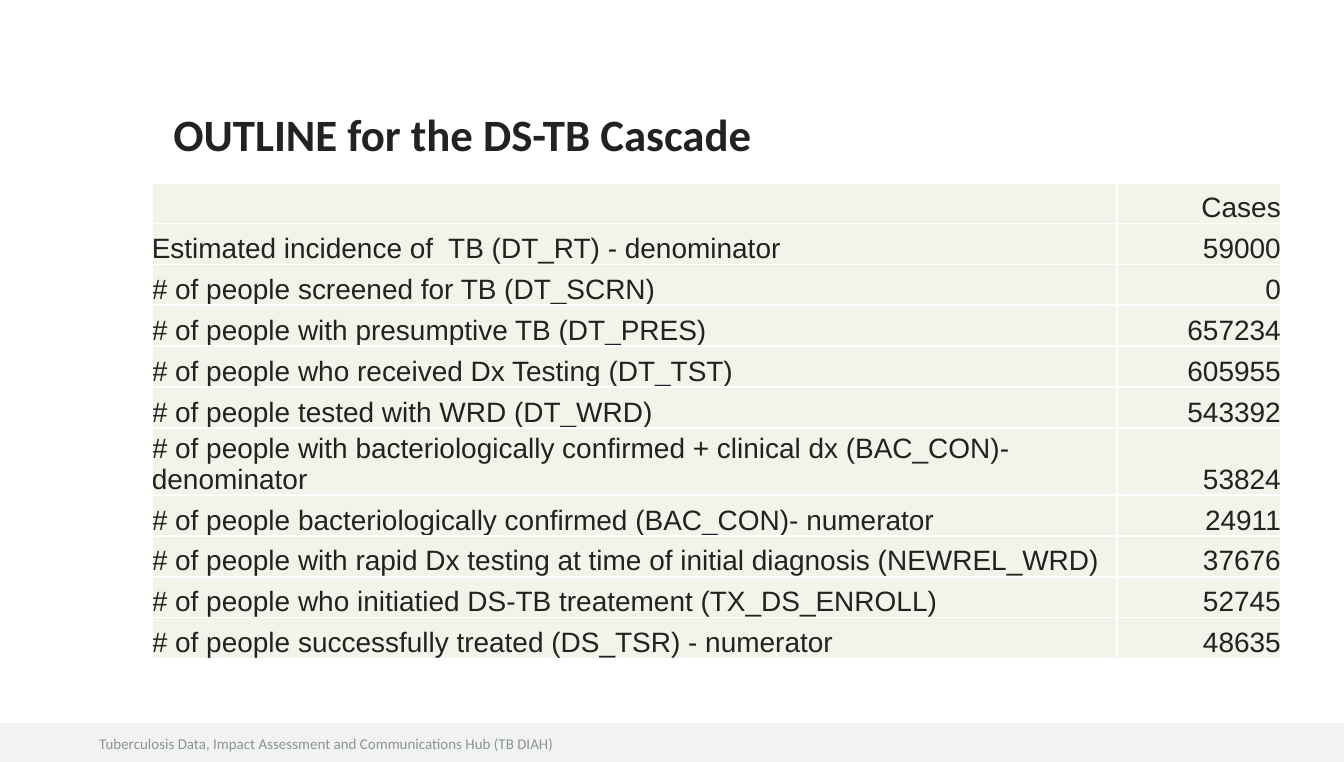
import pptx
import pptx.util
import pptx.dml.color
import pptx.enum.shapes
import pptx.enum.text
import pptx.oxml
import pptx.oxml.ns

Inches = pptx.util.Inches
Pt = pptx.util.Pt
RGBColor = pptx.dml.color.RGBColor
Anchor = pptx.enum.text.MSO_ANCHOR
Align = pptx.enum.text.PP_ALIGN

INK = RGBColor(0x22, 0x22, 0x22)
FOOTER_INK = RGBColor(0x87, 0x94, 0x99)
FOOTER_FILL = RGBColor(0xF2, 0xF2, 0xF2)
CELL_FILL = RGBColor(0xF1, 0xF4, 0xE8)
BORDER = RGBColor(0xFF, 0xFF, 0xFF)

ROWS = [
    ("", "Cases"),
    ("Estimated incidence of  TB (DT_RT) - denominator", "59000"),
    ("# of people screened for TB (DT_SCRN)", "0"),
    ("# of people with presumptive TB (DT_PRES)", "657234"),
    ("# of people who received Dx Testing (DT_TST)", "605955"),
    ("# of people tested with WRD (DT_WRD)", "543392"),
    ("# of people with bacteriologically confirmed + clinical dx (BAC_CON)- denominator", "53824"),
    ("# of people bacteriologically confirmed (BAC_CON)- numerator", "24911"),
    ("# of people with rapid Dx testing at time of initial diagnosis (NEWREL_WRD)", "37676"),
    ("# of people who initiatied DS-TB treatement (TX_DS_ENROLL)", "52745"),
    ("# of people successfully treated (DS_TSR) - numerator", "48635"),
]
TALL_ROW = 6


def set_values(target, values):
    for name, value in values.items():
        setattr(target, name, value)


def format_font(font, color, values):
    set_values(font, values)
    font.color.rgb = color


deck = pptx.Presentation()
set_values(deck, {"slide_width": Inches(10), "slide_height": Inches(5.67)})
slide = deck.slides.add_slide(deck.slide_layouts[5])

footer_bar = slide.shapes.add_shape(
    pptx.enum.shapes.MSO_SHAPE.RECTANGLE, Inches(0), Inches(5.38), Inches(10), Inches(0.29))
footer_bar.shadow.inherit = False
footer_bar.fill.solid()
footer_bar.fill.fore_color.rgb = FOOTER_FILL
footer_bar.line.fill.background()

footer_box = slide.shapes.add_textbox(Inches(0.64), Inches(5.42), Inches(5), Inches(0.24))
footer_box.text_frame.word_wrap = True
footer_para = footer_box.text_frame.paragraphs[0]
footer_para.text = "Tuberculosis Data, Impact Assessment and Communications Hub (TB DIAH)"
format_font(footer_para.font, FOOTER_INK, {"name": "Calibri", "size": Pt(8)})

title = slide.shapes.title
set_values(title, {"left": Inches(1.22), "top": Inches(0.59),
                   "width": Inches(8.22), "height": Inches(0.86)})
set_values(title.text_frame, {
    "text": "OUTLINE for the DS-TB Cascade",
    "vertical_anchor": Anchor.MIDDLE, "word_wrap": True,
    "auto_size": pptx.enum.text.MSO_AUTO_SIZE.NONE,
    "margin_left": Inches(0.07), "margin_right": Inches(0.07),
    "margin_top": Inches(0.04), "margin_bottom": Inches(0.04)})
title_para = title.text_frame.paragraphs[0]
set_values(title_para, {"alignment": Align.LEFT, "line_spacing": 0.9})
format_font(title_para.font, INK, {"name": "Calibri", "size": Pt(24), "bold": True})

table = slide.shapes.add_table(
    len(ROWS), 2, Inches(1.13), Inches(1.36), Inches(8.4), Inches(3.54)).table
table.columns[0].width = Inches(7.18)
table.columns[1].width = Inches(1.22)

for row_index, row_texts in enumerate(ROWS):
    table.rows[row_index].height = Inches(0.5 if row_index == TALL_ROW else 0.304)
    for column_index, text in enumerate(row_texts):
        cell = table.cell(row_index, column_index)
        set_values(cell, {"text": text, "vertical_anchor": Anchor.BOTTOM,
                          "margin_left": 0, "margin_right": 0,
                          "margin_top": 0, "margin_bottom": 0})
        para = cell.text_frame.paragraphs[0]
        para.alignment = Align.RIGHT if column_index else Align.LEFT
        format_font(para.font, INK, {"name": "Arial", "size": Pt(15), "bold": False})
        properties = cell._tc.get_or_add_tcPr()
        for side in ("lnL", "lnR", "lnT", "lnB"):
            properties.append(pptx.oxml.parse_xml(
                f'<a:{side} {pptx.oxml.ns.nsdecls("a")} w="{Pt(1)}"><a:solidFill>'
                f'<a:srgbClr val="{BORDER}"/></a:solidFill></a:{side}>'))
        cell.fill.solid()
        cell.fill.fore_color.rgb = CELL_FILL

deck.save("out.pptx")
